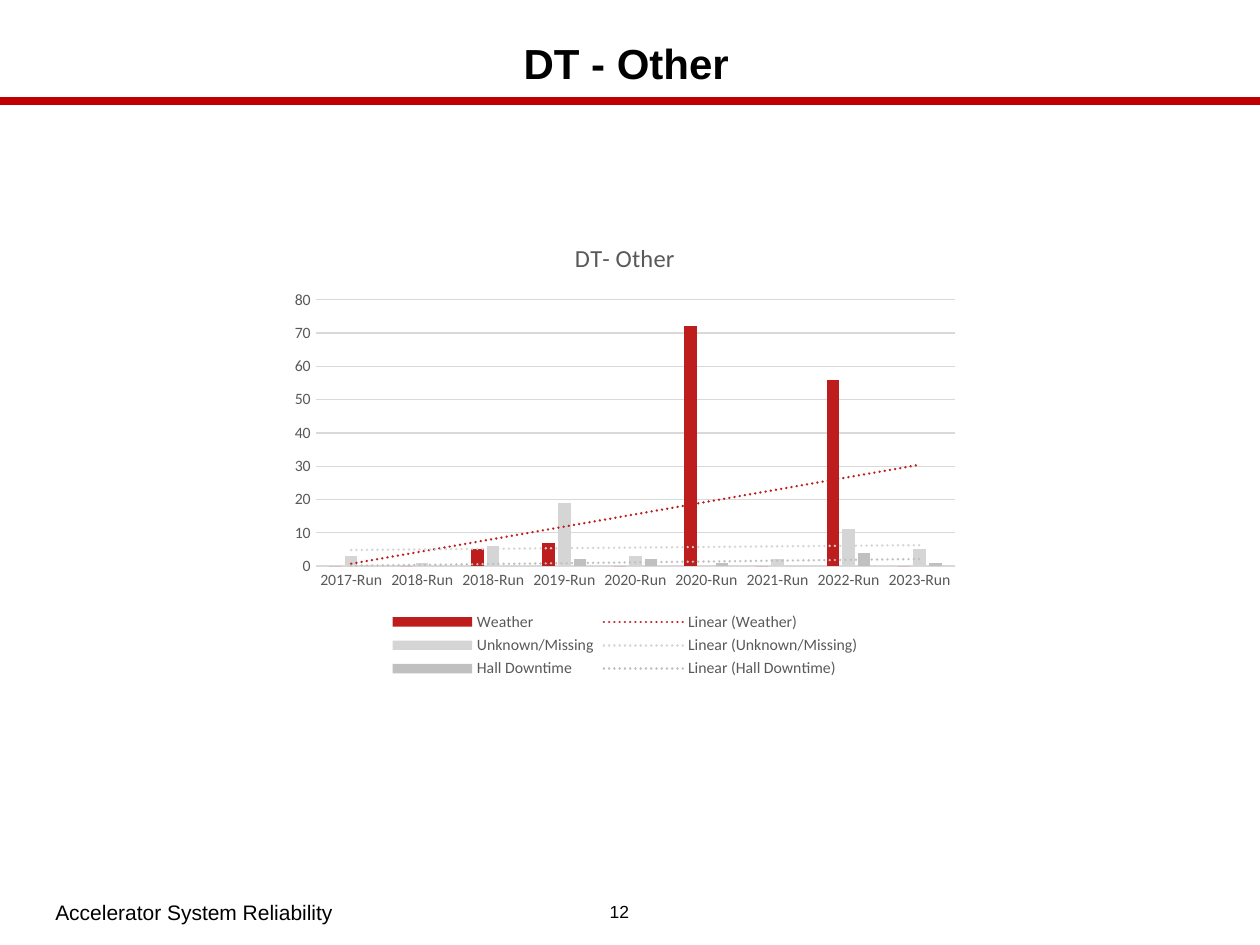
from lxml import etree
from pptx import Presentation
from pptx import util as u
from pptx.chart.data import CategoryChartData
from pptx.dml.color import RGBColor
from pptx.enum import chart as ch, shapes, text
from pptx.oxml import parse_xml
from pptx.oxml.ns import nsdecls, qn

BLACK = RGBColor(0x00, 0x00, 0x00)
RULE_RED = RGBColor(0xC0, 0x00, 0x00)
LABEL_GRAY = RGBColor(0x59, 0x59, 0x59)
GRID_GRAY = RGBColor(0xD9, 0xD9, 0xD9)

RUNS = ["2017-Run", "2018-Run", "2018-Run", "2019-Run", "2020-Run",
        "2020-Run", "2021-Run", "2022-Run", "2023-Run"]
DOWNTIME = [
    ("Weather", RGBColor(0xBE, 0x1D, 0x1D), (0, 0, 5, 7, 0, 72, 0, 56, 0)),
    ("Unknown/Missing", RGBColor(0xD5, 0xD5, 0xD5), (3, 1, 6, 19, 3, 0, 2, 11, 5)),
    ("Hall Downtime", RGBColor(0xC0, 0xC0, 0xC0), (0, 0, 0, 2, 2, 1, 0, 4, 1)),
]


class Deck:
    """Style and current slide; lengths are cells of a 100 x 75 grid."""
    COLS, ROWS = 100, 75
    FONT, CHART_FONT = "Arial", "Calibri"

    def __init__(self):
        self.prs = Presentation()
        self.prs.slide_width, self.prs.slide_height = u.Inches(10), u.Inches(7.5)
        self.s = self.prs.slides.add_slide(self.prs.slide_layouts[5])

    def x(self, cols):
        return round(self.prs.slide_width * cols / self.COLS)

    def y(self, rows):
        return round(self.prs.slide_height * rows / self.ROWS)

    def box(self, col, row, cols, rows):
        return self.x(col), self.y(row), self.x(cols), self.y(rows)

    def style(self, font, size, color=BLACK, name=FONT, bold=False):
        font.size, font.name, font.bold = u.Pt(size), name, bold
        font.color.rgb = color

    def put_text(self, sp, words, size, align, bold=False):
        tf = sp.text_frame
        tf.word_wrap = True
        tf.auto_size = text.MSO_AUTO_SIZE.NONE
        tf.vertical_anchor = text.MSO_ANCHOR.MIDDLE
        p = tf.paragraphs[0]
        p.alignment = align
        r = p.add_run()
        r.text = words
        self.style(r.font, size, bold=bold)
        return p

    def title(self, words, *cells):
        sp = self.s.shapes.title
        sp.left, sp.top, sp.width, sp.height = self.box(*cells)
        p = self.put_text(sp, words, 24, text.PP_ALIGN.CENTER, bold=True)
        p.line_spacing = 0.9

    def label(self, words, size, align, *cells):
        self.put_text(self.s.shapes.add_textbox(*self.box(*cells)), words, size, align)

    def rule(self, row):
        line = self.s.shapes.add_connector(
            shapes.MSO_CONNECTOR.STRAIGHT, 0, self.y(row), self.x(self.COLS), self.y(row))
        line.line.color.rgb, line.line.width = RULE_RED, u.Pt(4.5)
        etree.SubElement(line._element.spPr, qn("a:effectLst"))

    def trend(self, series, color):
        line = parse_xml(
            f'<c:trendline {nsdecls("c", "a")}><c:spPr><a:ln w="{u.Pt(1.5)}" cap="rnd">'
            f'<a:solidFill><a:srgbClr val="{color}"/></a:solidFill>'
            '<a:prstDash val="sysDot"/></a:ln></c:spPr><c:trendlineType val="linear"/>'
            '<c:dispRSqr val="0"/><c:dispEq val="0"/></c:trendline>')
        series._element.find(qn("c:cat")).addprevious(line)

    def column_chart(self, heading, cats, rows, *cells):
        data = CategoryChartData()
        data.categories = cats
        for name, _, values in rows:
            data.add_series(name, values)
        chart = self.s.shapes.add_chart(
            ch.XL_CHART_TYPE.COLUMN_CLUSTERED, *self.box(*cells), data).chart
        self.style(chart.font, 10, name=self.CHART_FONT)

        # Chart title and legend
        chart.has_title = True
        r = chart.chart_title.text_frame.paragraphs[0].add_run()
        r.text = heading
        self.style(r.font, 14, LABEL_GRAY, self.CHART_FONT)
        chart.chart_title.include_in_layout = False
        chart.has_legend = True
        chart.legend.position = ch.XL_LEGEND_POSITION.BOTTOM
        chart.legend.include_in_layout = False
        self.style(chart.legend.font, 9, LABEL_GRAY, self.CHART_FONT)

        # Axes
        for axis in (chart.category_axis, chart.value_axis):
            axis.major_tick_mark = axis.minor_tick_mark = ch.XL_TICK_MARK.NONE
            self.style(axis.tick_labels.font, 9, LABEL_GRAY, self.CHART_FONT)
        value = chart.value_axis
        value.minimum_scale, value.maximum_scale, value.major_unit = 0, 80, 10
        value.format.line.fill.background()
        for line in (chart.category_axis.format.line, value.major_gridlines.format.line):
            line.color.rgb, line.width = GRID_GRAY, u.Pt(0.75)

        # Columns and their trend lines
        plot = chart.plots[0]
        plot.gap_width, plot.overlap, plot.vary_by_categories = 219, -27, False
        for series, (_, color, _) in zip(plot.series, rows):
            series.format.fill.solid()
            series.format.fill.fore_color.rgb = color
            series.invert_if_negative = False
            self.trend(series, color)


def main():
    deck = Deck()
    # Header
    deck.rule(8)
    deck.title("DT - Other", 3.4, 2.6, 92.6, 5.3)
    # Downtime chart
    deck.column_chart("DT- Other", RUNS, DOWNTIME, 22.3, 17.5, 54.6, 36.7)
    # Footer
    deck.label("Accelerator System Reliability", 12, text.PP_ALIGN.LEFT, 3.4, 70.7, 42.8, 3.4)
    deck.label("12", 10, text.PP_ALIGN.CENTER, 46.2, 70.7, 5.9, 3.3)
    deck.prs.save("out.pptx")


if __name__ == "__main__":
    main()
